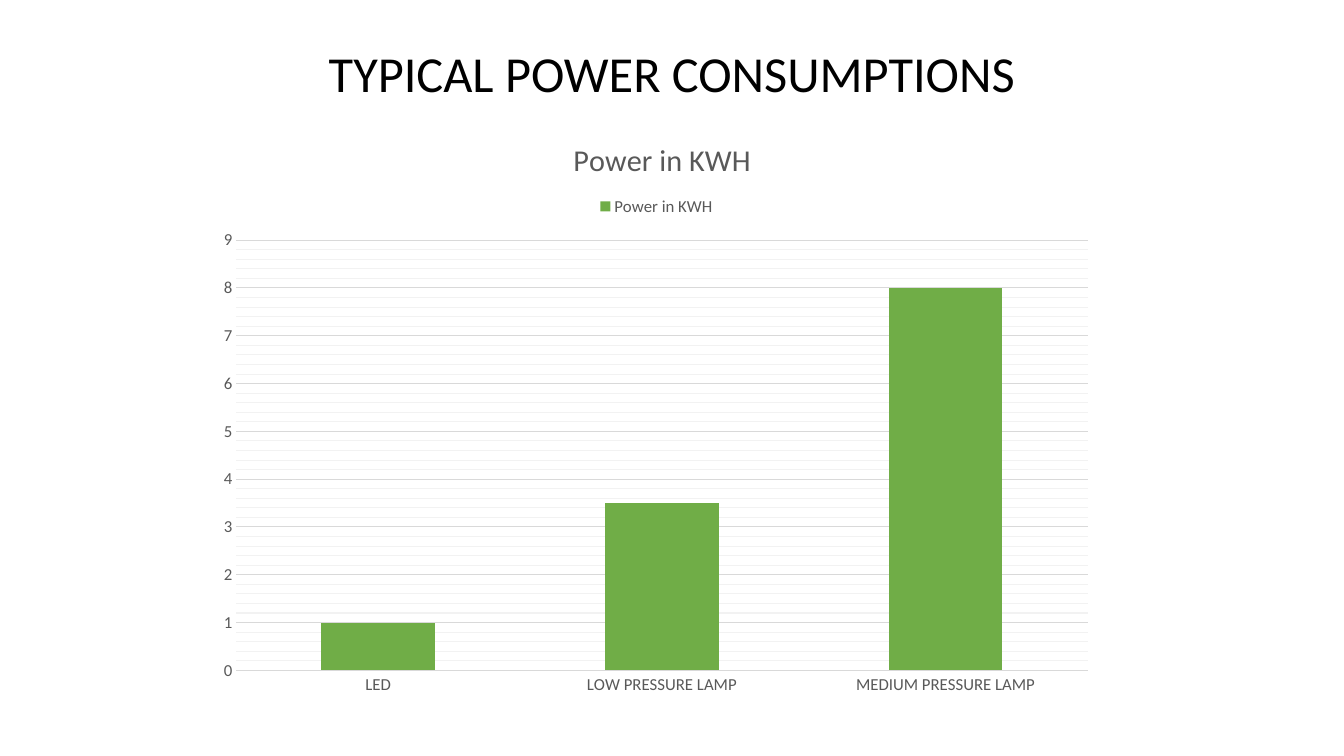
import dataclasses

import lxml.etree
import pptx
import pptx.chart.data
import pptx.dml.color
import pptx.enum.chart
import pptx.enum.text
import pptx.oxml.ns
import pptx.util
from pptx.util import Cm, Pt

FONT = "Calibri"
BLACK, GREY, GREEN = "000000", "595959", "70AD47"
MAJOR_LINE, MINOR_LINE = "D9D9D9", "F2F2F2"
POWER_KWH = {"LED": 1, "LOW PRESSURE LAMP": 3.5, "MEDIUM PRESSURE LAMP": 8}


@dataclasses.dataclass(frozen=True)
class ChartPart:
    """A chart part and its layout, as fractions of the chart's size."""
    tag: str
    index: int
    layout: dict


CHART_PARTS = [
    ChartPart("c:title", 1, {"xMode": "edge", "yMode": "edge", "x": 0.4, "y": 0.04}),
    ChartPart("c:legend", 1, {"xMode": "edge", "yMode": "edge", "x": 0.43, "y": 0.14}),
    ChartPart("c:plotArea", 0, {"layoutTarget": "inner", "xMode": "edge", "yMode": "edge",
                                "x": 0.03, "y": 0.22, "w": 0.95, "h": 0.72}),
]


def color(value: str) -> pptx.dml.color.RGBColor:
    return pptx.dml.color.RGBColor.from_string(value)


def set_all(target, values: dict) -> None:
    for name, value in values.items():
        setattr(target, name, value)


def style_font(font, size: float, font_color: str) -> None:
    set_all(font, {"name": FONT, "size": Pt(size), "bold": False})
    font.color.rgb = color(font_color)


def style_line(line, line_color: str) -> None:
    line.color.rgb = color(line_color)
    line.width = Pt(0.75)


def place_part(chart, part: ChartPart) -> None:
    qn = pptx.oxml.ns.qn
    element = chart.element.find(".//" + qn(part.tag))
    for old_layout in element.findall(qn("c:layout")):
        element.remove(old_layout)
    layout = lxml.etree.Element(qn("c:layout"))
    manual = lxml.etree.SubElement(layout, qn("c:manualLayout"))
    for name, value in part.layout.items():
        lxml.etree.SubElement(manual, qn(f"c:{name}")).set("val", str(value))
    element.insert(part.index, layout)


def style_minor_gridlines(chart, line_color: str) -> None:
    qn = pptx.oxml.ns.qn
    parent = chart.element.find(".//" + qn("c:minorGridlines"))
    for tag in ("c:spPr", "a:ln", "a:solidFill", "a:srgbClr"):
        parent = lxml.etree.SubElement(parent, qn(tag))
        if tag == "a:ln":
            parent.set("w", str(Pt(0.75)))
    parent.set("val", line_color)


def add_heading(slide, text: str) -> None:
    shape = slide.shapes.add_textbox(Cm(0), Cm(0.94), Cm(33.87), Cm(1.8))
    set_all(shape.text_frame, {"word_wrap": True,
                               "auto_size": pptx.enum.text.MSO_AUTO_SIZE.SHAPE_TO_FIT_TEXT})
    paragraph = shape.text_frame.paragraphs[0]
    paragraph.alignment = pptx.enum.text.PP_ALIGN.CENTER
    run = paragraph.add_run()
    run.text = text
    style_font(run.font, 36, BLACK)


def add_power_chart(slide, name: str) -> None:
    data = pptx.chart.data.CategoryChartData()
    data.categories = list(POWER_KWH)
    data.add_series(name, list(POWER_KWH.values()))
    chart = slide.shapes.add_chart(
        pptx.enum.chart.XL_CHART_TYPE.COLUMN_STACKED,
        Cm(5.28), Cm(2.74), Cm(22.58), Cm(15.06), data).chart
    style_font(chart.font, 10, BLACK)

    set_all(chart, {"has_title": True, "has_legend": True})
    title_run = chart.chart_title.text_frame.paragraphs[0].add_run()
    title_run.text = name
    style_font(title_run.font, 21.6, GREY)
    set_all(chart.legend, {"position": pptx.enum.chart.XL_LEGEND_POSITION.TOP,
                           "include_in_layout": False})
    style_font(chart.legend.font, 12, GREY)

    plot = chart.plots[0]
    set_all(plot, {"gap_width": 150, "overlap": 100, "vary_by_categories": False})
    fill = plot.series[0].format.fill
    fill.solid()
    fill.fore_color.rgb = color(GREEN)

    no_tick = pptx.enum.chart.XL_TICK_MARK.NONE
    for axis in (chart.category_axis, chart.value_axis):
        set_all(axis, {"major_tick_mark": no_tick, "minor_tick_mark": no_tick})
        style_font(axis.tick_labels.font, 12, GREY)
    style_line(chart.category_axis.format.line, MAJOR_LINE)

    value_axis = chart.value_axis
    set_all(value_axis, {"minimum_scale": 0, "maximum_scale": 9, "major_unit": 1,
                         "minor_unit": 0.2, "has_major_gridlines": True,
                         "has_minor_gridlines": True})
    value_axis.format.line.fill.background()
    style_line(value_axis.major_gridlines.format.line, MAJOR_LINE)
    style_minor_gridlines(chart, MINOR_LINE)

    for part in CHART_PARTS:
        place_part(chart, part)


def main() -> None:
    presentation = pptx.Presentation()
    set_all(presentation, {"slide_width": Cm(33.87), "slide_height": Cm(19.05)})
    slide = presentation.slides.add_slide(presentation.slide_layouts[6])
    add_power_chart(slide, "Power in KWH")
    add_heading(slide, "TYPICAL POWER CONSUMPTIONS")
    presentation.save("out.pptx")


if __name__ == "__main__":
    main()
